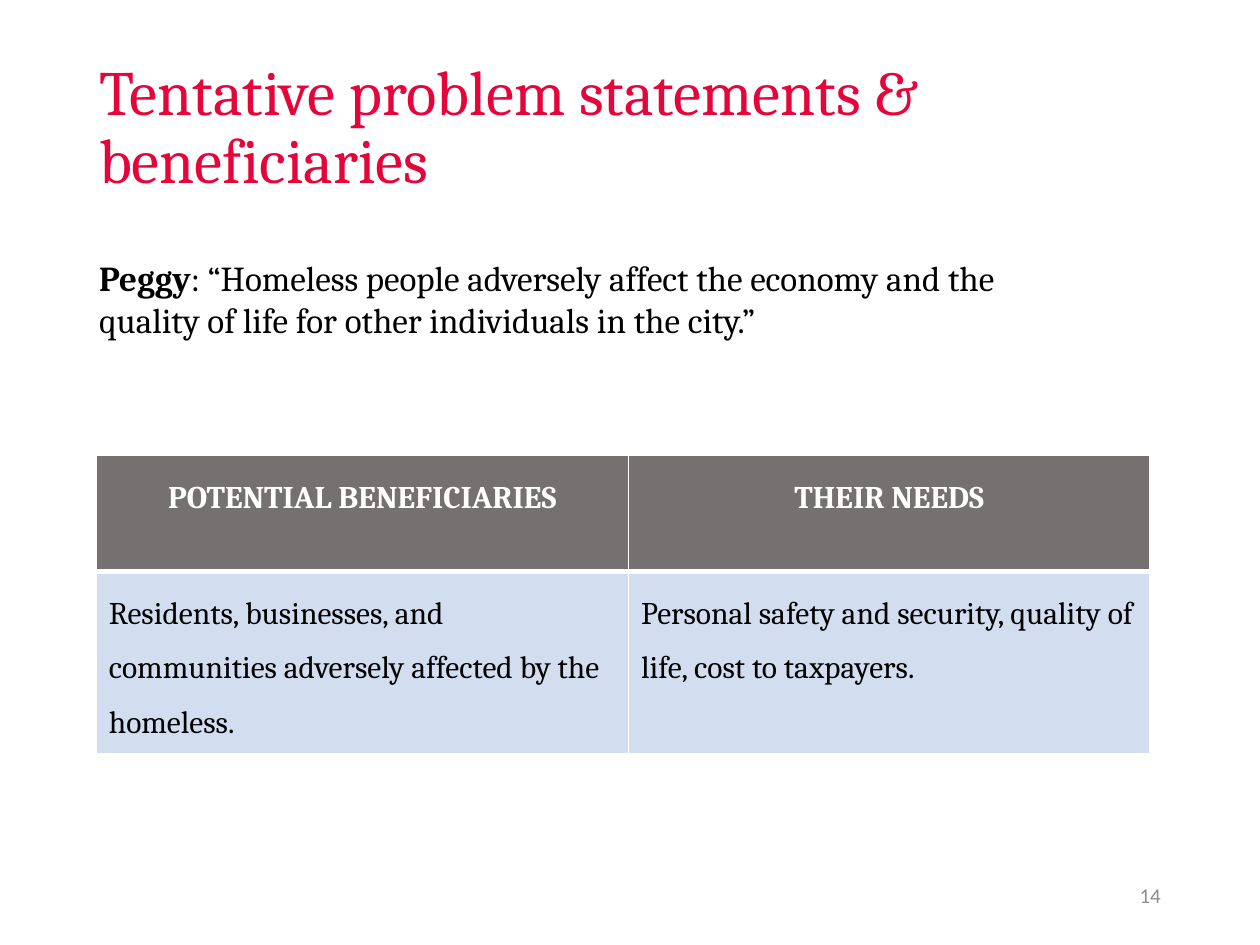
from lxml.etree import SubElement
from pptx import Presentation
from pptx.dml.color import RGBColor
from pptx.enum.text import MSO_ANCHOR as Anchor, PP_ALIGN as Align
from pptx.oxml.ns import qn
from pptx.util import Cm, Pt

RED = RGBColor(0xE5, 0x05, 0x3A)
BLACK = RGBColor(0, 0, 0)
WHITE = RGBColor(0xFF, 0xFF, 0xFF)
GRAY = RGBColor(0x8C, 0x8C, 0x8C)
HEAD = RGBColor(0x76, 0x71, 0x71)
BODY = RGBColor(0xD2, 0xDE, 0xEF)

ROWS = [
    ("POTENTIAL BENEFICIARIES", "THEIR NEEDS"),
    ("Residents, businesses, and communities adversely affected by the homeless.",
     "Personal safety and security, quality of life, cost to taxpayers."),
]


def write(frame, text, lead="", size=18, font="Cambria", color=BLACK,
          bold=False, align=Align.LEFT, lines=1.0):
    """Fill a frame with one paragraph; lead is a bold opening."""
    para = frame.paragraphs[0]
    para.alignment = align
    para.line_spacing = lines
    for part, heavy in ((lead, True), (text, bold)):
        if part:
            run = para.add_run()
            run.text = part
            run.font.name = font
            run.font.size = Pt(size)
            run.font.bold = heavy
            run.font.color.rgb = color


def add_text(slide, box, text, anchor=Anchor.TOP, **style):
    frame = slide.shapes.add_textbox(*map(Cm, box)).text_frame
    frame.word_wrap = True
    frame.vertical_anchor = anchor
    write(frame, text, **style)


def add_edges(cell, widths):
    """Draw white borders, with widths in points by side."""
    props = cell._tc.get_or_add_tcPr()
    for side in ("L", "R", "T", "B"):
        line = SubElement(props, qn(f"a:ln{side}"), w=str(Pt(widths.get(side, 1))))
        fill = SubElement(line, qn("a:solidFill"))
        SubElement(fill, qn("a:srgbClr"), val=str(WHITE))


def add_grid(slide):
    table = slide.shapes.add_table(
        2, 2, Cm(1.94), Cm(9.18), Cm(21.24), Cm(5.03)).table
    for col, width in zip(table.columns, (10.73, 10.51)):
        col.width = Cm(width)
    for row, height in zip(table.rows, (2.34, 2.69)):
        row.height = Cm(height)
    looks = [
        (HEAD, {"B": 3}, dict(color=WHITE, bold=True, align=Align.CENTER)),
        (BODY, {"T": 3}, {}),
    ]
    for row, texts, (fill, edges, style) in zip(table.rows, ROWS, looks):
        for cell, text in zip(row.cells, texts):
            add_edges(cell, edges)
            cell.fill.solid()
            cell.fill.fore_color.rgb = fill
            write(cell.text_frame, text, lines=1.5, **style)


def main():
    deck = Presentation()
    deck.slide_width, deck.slide_height = Cm(25.4), Cm(19.05)
    slide = deck.slides.add_slide(deck.slide_layouts[6])
    add_text(slide, (1.75, 1.55, 21.9, 2.11),
             "Tentative problem statements & beneficiaries",
             anchor=Anchor.MIDDLE, size=36, color=RED, lines=0.9)
    add_text(slide, (17.93, 17.53, 5.72, 1.02), "14", anchor=Anchor.MIDDLE,
             size=12, font="Calibri", color=GRAY, align=Align.RIGHT)
    add_text(slide, (1.75, 5.05, 20.17, 1.96),
             ": “Homeless people adversely affect the economy and the quality "
             "of life for other individuals in the city.”",
             lead="Peggy", size=20)
    add_grid(slide)
    deck.save("out.pptx")


if __name__ == "__main__":
    main()
